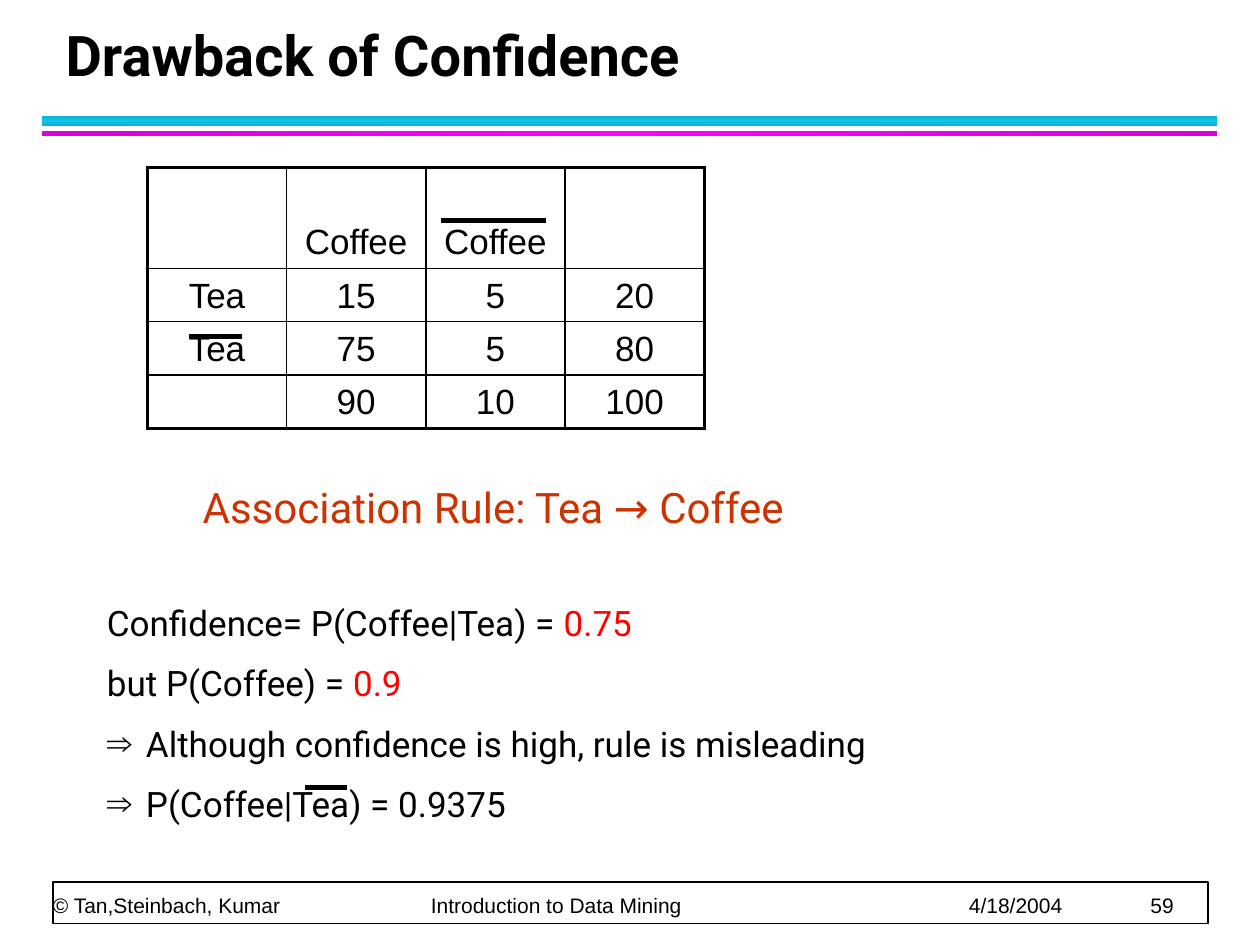
from copy import deepcopy

from lxml.etree import SubElement
from pptx import Presentation
from pptx.dml.color import RGBColor
from pptx.enum.shapes import MSO_CONNECTOR, MSO_SHAPE
from pptx.enum.text import MSO_ANCHOR, PP_ALIGN
from pptx.oxml.ns import qn
from pptx.util import Inches, Pt

THEME = {
    "black": RGBColor.from_string("000000"),
    "white": RGBColor.from_string("FFFFFF"),
    "rule": RGBColor.from_string("CC3300"),
    "value": RGBColor.from_string("FF0000"),
    "cyan": ("10B0D3", "12C2E9", "10B0D3"),
    "magenta": ("DA00DA", "FF00FF", "DA00DA"),
    "title_size": Pt(32),
    "rule_size": Pt(24),
    "body_size": Pt(20),
    "footer_size": Pt(12),
    "heading_font": "Roboto",
    "plain_font": "Arial",
}


def add_span(para, text, size, font="heading_font", color="black", bold=False):
    span = para.add_run()
    span.text = text
    values = {"name": THEME[font], "size": THEME[size], "bold": bold}
    for name, value in values.items():
        setattr(span.font, name, value)
    span.font.color.rgb = THEME[color]


def format_frame(frame, anchor, sides, ends):
    values = {
        "word_wrap": True, "vertical_anchor": anchor,
        "margin_left": Inches(sides), "margin_right": Inches(sides),
        "margin_top": Inches(ends), "margin_bottom": Inches(ends),
    }
    for name, value in values.items():
        setattr(frame, name, value)


deck = Presentation()
deck.slide_width = Inches(10)
deck.slide_height = Inches(7.5)
page = deck.slides.add_slide(deck.slide_layouts[5])

for top, height, colors, angle in [(0.92, 0.08, "cyan", 90), (1.04, 0.04, "magenta", 0)]:
    bar = page.shapes.add_shape(
        MSO_SHAPE.RECTANGLE, Inches(0.33), Inches(top), Inches(9.33), Inches(height))
    bar.shadow.inherit = False
    bar.line.fill.background()
    bar.fill.gradient()
    bar.fill.gradient_angle = angle
    stop_list = bar._element.spPr.find(qn("a:gradFill")).find(qn("a:gsLst"))
    stop_list.insert(1, deepcopy(stop_list[0]))
    for stop, position, color in zip(bar.fill.gradient_stops, (0, 0.5, 1), THEME[colors]):
        stop.position = position
        stop.color.rgb = RGBColor.from_string(color)

footer_frame = page.shapes.add_shape(
    MSO_SHAPE.RECTANGLE, Inches(0.42), Inches(7), Inches(9.17), Inches(0.33))
footer_frame.shadow.inherit = False
footer_frame.fill.solid()
footer_frame.fill.fore_color.rgb = THEME["white"]
footer_frame.line.color.rgb = THEME["black"]
footer_frame.line.width = Pt(1)

footer = page.shapes.add_textbox(Inches(0.42), Inches(7), Inches(9.15), Inches(0.28))
format_frame(footer.text_frame, MSO_ANCHOR.BOTTOM, 0, 0)
para = footer.text_frame.paragraphs[0]
para.line_spacing = Pt(20)
tab_list = SubElement(para._p.get_or_add_pPr(), qn("a:tabLst"))
for position in (3, 7.27, 8.71):
    SubElement(tab_list, qn("a:tab"), pos=str(Inches(position)), algn="l")
add_span(para, "© Tan,Steinbach, Kumar\tIntroduction to Data Mining\t4/18/2004\t59",
         "footer_size", "plain_font")

title = page.shapes.title
title.left, title.top = Inches(0.42), Inches(0.17)
title.width, title.height = Inches(9.06), Inches(0.58)
format_frame(title.text_frame, MSO_ANCHOR.BOTTOM, 0.1, 0.05)
para = title.text_frame.paragraphs[0]
para.alignment = PP_ALIGN.LEFT
para.line_spacing = Pt(36)
add_span(para, "Drawback of Confidence", "title_size", bold=True)

counts = [
    ["", "Coffee", "Coffee", ""],
    ["Tea", "15", "5", "20"],
    ["Tea", "75", "5", "80"],
    ["", "90", "10", "100"],
]
last = len(counts) - 1
table = page.shapes.add_table(
    4, 4, Inches(1.17), Inches(1.33), Inches(4.42), Inches(2.03)).table
table.first_row = table.horz_banding = False
for column in table.columns:
    column.width = Inches(1.105)
for row, height in zip(table.rows, (0.8, 0.41, 0.41, 0.41)):
    row.height = Inches(height)
for row_number, row in enumerate(counts):
    for column_number, text in enumerate(row):
        cell = table.cell(row_number, column_number)
        cell.vertical_anchor = MSO_ANCHOR.BOTTOM
        cell.margin_top, cell.margin_bottom = Inches(0.04), Inches(0.05)
        para = cell.text_frame.paragraphs[0]
        para.alignment = PP_ALIGN.CENTER
        if text:
            add_span(para, text, "body_size", "plain_font")
        outer_edges = {
            "a:lnL": column_number == 0, "a:lnR": column_number == last,
            "a:lnT": row_number == 0, "a:lnB": row_number == last,
        }
        properties = cell._tc.get_or_add_tcPr()
        for edge, is_outer in outer_edges.items():
            border = SubElement(properties, qn(edge), w=str(Pt(2.25 if is_outer else 1)))
            paint = SubElement(border, qn("a:solidFill"))
            SubElement(paint, qn("a:srgbClr"), val=str(THEME["black"]))
        cell.fill.background()

box = page.shapes.add_textbox(Inches(0.75), Inches(3.77), Inches(8.08), Inches(2.9))
format_frame(box.text_frame, MSO_ANCHOR.TOP, 0.1, 0.05)
para = box.text_frame.paragraphs[0]
para.space_after = Pt(29.5)
para._p.get_or_add_pPr().set("marL", str(Inches(0.76)))
add_span(para, "Association Rule: Tea → Coffee", "rule_size", color="rule")

statements = [
    (False, "Confidence= P(Coffee|Tea) = ", "0.75"),
    (False, "but P(Coffee) = ", "0.9"),
    (True, "Although confidence is high, rule is misleading", ""),
    (True, "P(Coffee|Tea) = 0.9375", ""),
]
for has_bullet, text, value in statements:
    para = box.text_frame.add_paragraph()
    para.space_before = Pt(10.5)
    if has_bullet:
        properties = para._p.get_or_add_pPr()
        properties.set("marL", str(Inches(0.31)))
        properties.set("indent", str(-Inches(0.31)))
        SubElement(properties, qn("a:buFont"), typeface=THEME["plain_font"])
        SubElement(properties, qn("a:buChar"), char="⇒")
    add_span(para, text, "body_size")
    if value:
        add_span(para, value, "body_size", color="value")

for start, end, height in [(3.5, 4.33, 1.75), (1.5, 1.92, 2.67), (2.42, 2.75, 6.25)]:
    overline = page.shapes.add_connector(
        MSO_CONNECTOR.STRAIGHT, Inches(start), Inches(height), Inches(end), Inches(height))
    overline.line.color.rgb = THEME["black"]
    overline.line.width = Pt(3)
    SubElement(overline._element.spPr, qn("a:effectLst"))

deck.save("out.pptx")
